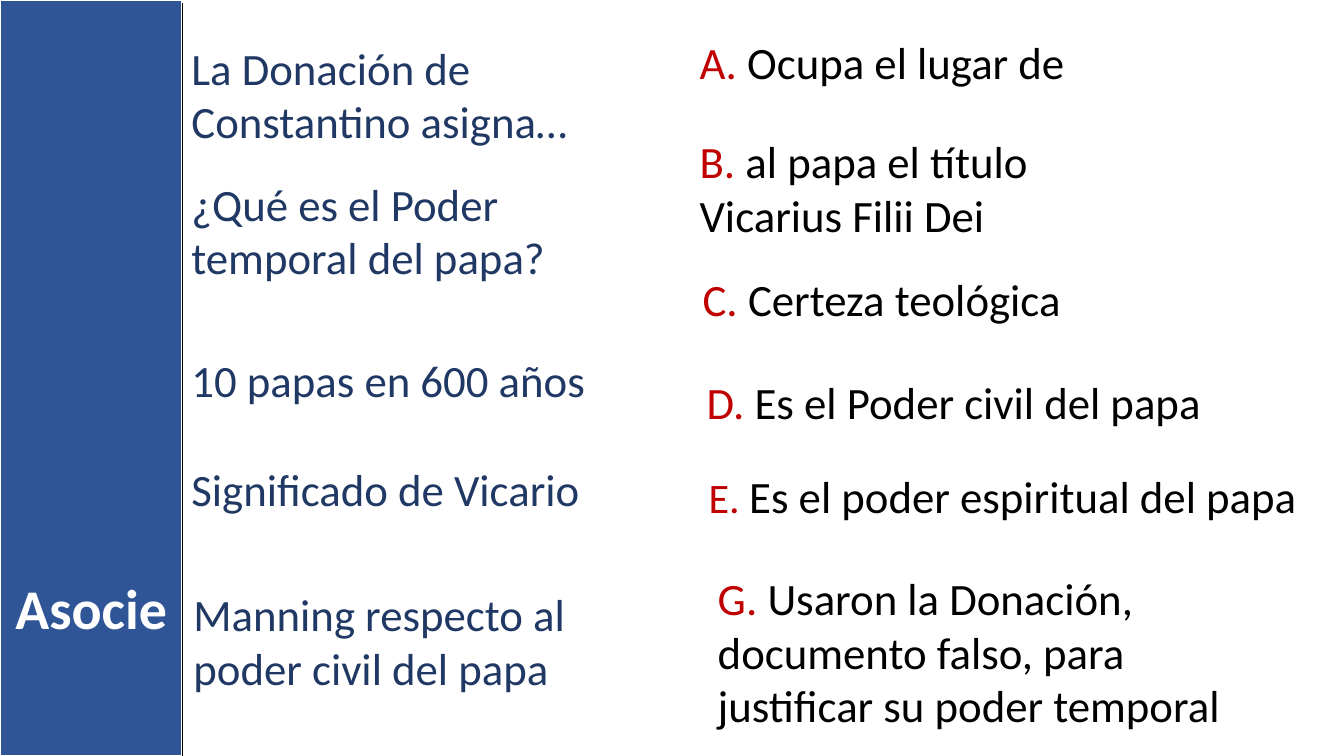
import pptx
import pptx.util
import pptx.dml.color
import pptx.enum.shapes
import pptx.enum.text
import lxml.etree

Inches, Pt = pptx.util.Inches, pptx.util.Pt

WIDTH, HEIGHT, BAR = 13.33, 7.5, 1.81
BLUE, NAVY, RED, BLACK, WHITE = "2F5597", "203864", "C00000", "000000", "FFFFFF"

# text, left, top, width, height
PROMPTS = [
    ("La Donación de Constantino asigna…", 1.8, 0.35, 4.23, 1.18),
    ("¿Qué es el Poder temporal del papa?", 1.8, 1.7, 4.62, 1.18),
    ("10 papas en 600 años", 1.8, 3.45, 4.23, 0.64),
    ("Significado de Vicario", 1.8, 4.53, 4.61, 0.64),
    ("Manning respecto al poder civil del papa", 1.82, 5.77, 4.77, 1.18),
]
# letter, letter size, text, left, top, width, height
ANSWERS = [
    ("A. ", 32, "Ocupa el lugar de", 6.84, 0.3, 6.3, 0.64),
    ("B. ", 32, "al papa el título Vicarius Filii Dei", 6.84, 1.28, 4.52, 1.18),
    ("C. ", 32, "Certeza teológica", 6.87, 2.65, 5.98, 0.64),
    ("D. ", 32, "Es el Poder civil del papa", 6.91, 3.67, 6.04, 0.64),
    ("E. ", 30, "Es el poder espiritual del papa", 6.93, 4.6, 6.16, 0.64),
    ("G. ", 32, "Usaron la Donación, documento falso, para justificar su poder temporal",
     7.02, 5.61, 5.82, 1.72),
]


def rgb(color):
    return pptx.dml.color.RGBColor.from_string(color)


def add_text(s, box, *runs, bold=None, align=None):
    """Add a one-paragraph text box; each run is (text, size, colour)."""
    tf = s.shapes.add_textbox(*map(Inches, box)).text_frame
    tf.word_wrap = True
    tf.auto_size = pptx.enum.text.MSO_AUTO_SIZE.SHAPE_TO_FIT_TEXT
    p = tf.paragraphs[0]
    p.alignment = align
    for text, size, color in runs:
        r = p.add_run()
        r.text = text
        r.font.name = "Calibri"
        r.font.size = Pt(size)
        r.font.bold = bold
        r.font.color.rgb = rgb(color)


def main():
    prs = pptx.Presentation()
    prs.slide_width, prs.slide_height = Inches(WIDTH), Inches(HEIGHT)
    s = prs.slides.add_slide(prs.slide_layouts[6])

    bar = s.shapes.add_shape(pptx.enum.shapes.MSO_SHAPE.RECTANGLE,
                             0, 0, Inches(BAR), Inches(HEIGHT))
    bar.shadow.inherit = False
    bar.fill.solid()
    bar.fill.fore_color.rgb = rgb(BLUE)
    bar.line.color.rgb = rgb(WHITE)
    bar.line.width = Pt(1.5)

    for text, *box in PROMPTS:
        add_text(s, box, (text, 32, NAVY))
    for letter, size, text, *box in ANSWERS:
        add_text(s, box, (letter, size, RED), (text, 32, BLACK))
    add_text(s, (0, 5.64, BAR, 0.77), ("Asocie", 40, WHITE),
             bold=True, align=pptx.enum.text.PP_ALIGN.CENTER)

    edge = s.shapes.add_connector(pptx.enum.shapes.MSO_CONNECTOR.STRAIGHT,
                                  Inches(BAR), Inches(0.03), Inches(BAR), Inches(HEIGHT))
    edge.line.color.rgb = rgb(BLACK)
    edge.line.width = Pt(1)
    lxml.etree.SubElement(edge._element.spPr, pptx.oxml.ns.qn("a:effectLst"))

    prs.save("out.pptx")


if __name__ == "__main__":
    main()
